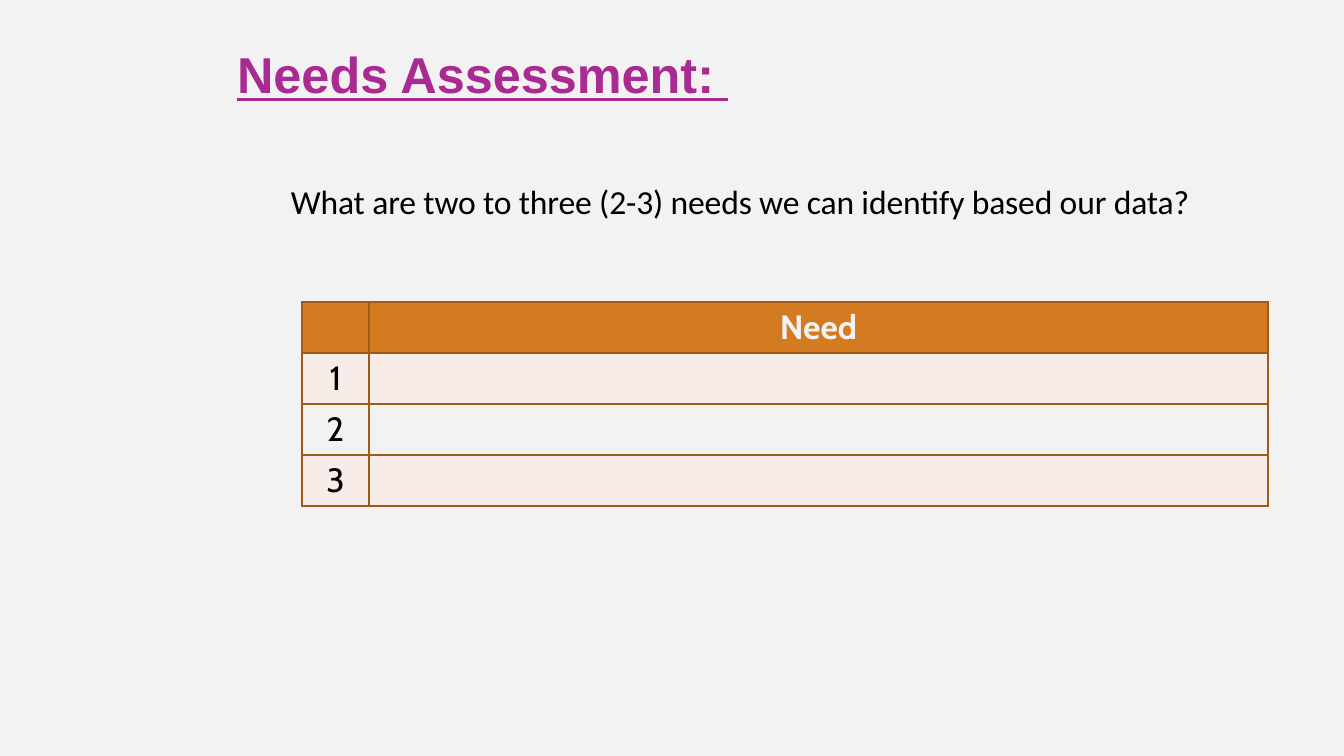
from dataclasses import dataclass

from lxml.etree import SubElement
from pptx import Presentation
from pptx.dml.color import RGBColor
from pptx.enum.text import MSO_ANCHOR, PP_ALIGN
from pptx.oxml.ns import qn
from pptx.util import Emu, Pt

COLORS = {
    "background": "F2F2F2",
    "title": "A92A91",
    "text": "000000",
    "header": "D47B22",
    "header_text": "F2F2F2",
    "band": "F7ECE8",
    "border": "9F5C19",
}


@dataclass
class Row:
    number: str
    need: str
    fill: str
    color: str
    bold: bool


ROWS = [
    Row("", "Need", "header", "header_text", True),
    Row("1", "", "band", "text", False),
    Row("2", "", "background", "text", False),
    Row("3", "", "band", "text", False),
]
COLUMN_WIDTHS = [67, 899]
ROW_HEIGHT = 51


def px(n: int) -> Emu:
    return Emu(round(n * 914400 / 100.8))


def rgb(name: str) -> RGBColor:
    return RGBColor.from_string(COLORS[name])


def write(p, text: str, color: str, **formats):
    r = p.add_run()
    r.text = text
    for name, value in formats.items():
        setattr(r.font, name, value)
    r.font.color.rgb = rgb(color)
    return r


def add_borders(cell) -> None:
    tcPr = cell._tc.get_or_add_tcPr()
    for side in ("L", "R", "T", "B"):
        ln = SubElement(tcPr, qn(f"a:ln{side}"), w=str(Pt(1)))
        fill = SubElement(ln, qn("a:solidFill"))
        SubElement(fill, qn("a:srgbClr"), val=COLORS["border"])


def add_needs_table(s, left: int, top: int) -> None:
    frame = s.shapes.add_table(
        len(ROWS), len(COLUMN_WIDTHS), px(left), px(top),
        px(sum(COLUMN_WIDTHS)), px(ROW_HEIGHT * len(ROWS)))
    table = frame.table
    table.horz_banding = False
    for column, width in zip(table.columns, COLUMN_WIDTHS):
        column.width = px(width)
    for table_row, row in zip(table.rows, ROWS):
        table_row.height = px(ROW_HEIGHT)
        for cell, text in zip(table_row.cells, (row.number, row.need)):
            add_borders(cell)
            cell.fill.solid()
            cell.fill.fore_color.rgb = rgb(row.fill)
            if text:
                p = cell.text_frame.paragraphs[0]
                p.alignment = PP_ALIGN.CENTER
                write(p, text, row.color, name="Cabin", size=Pt(24), bold=row.bold)


def main() -> None:
    prs = Presentation()
    prs.slide_width, prs.slide_height = px(1344), px(756)
    s = prs.slides.add_slide(prs.slide_layouts[5])
    s.background.fill.solid()
    s.background.fill.fore_color.rgb = rgb("background")

    # Title
    title = s.shapes.title
    title.left, title.top, title.width, title.height = map(px, (227, 42, 1066, 69))
    title.text_frame.vertical_anchor = MSO_ANCHOR.MIDDLE
    p = title.text_frame.paragraphs[0]
    p.alignment = PP_ALIGN.LEFT
    p.line_spacing = 0.95
    write(p, "Needs Assessment: ", "title",
          name="Arial", size=Pt(36), bold=True, underline=True)

    # Question
    question = s.shapes.add_textbox(*map(px, (281, 176, 1008, 50)))
    tf = question.text_frame
    tf.word_wrap = True
    p = tf.paragraphs[0]
    p.space_after = Pt(6)
    r = write(p, "What are two to three (2-3) needs we can identify based our data?",
              "text", name="Calibri", size=Pt(24))
    r._r.get_or_add_rPr().set("spc", "-10")

    # Needs table
    add_needs_table(s, 302, 302)

    prs.save("out.pptx")


if __name__ == "__main__":
    main()
